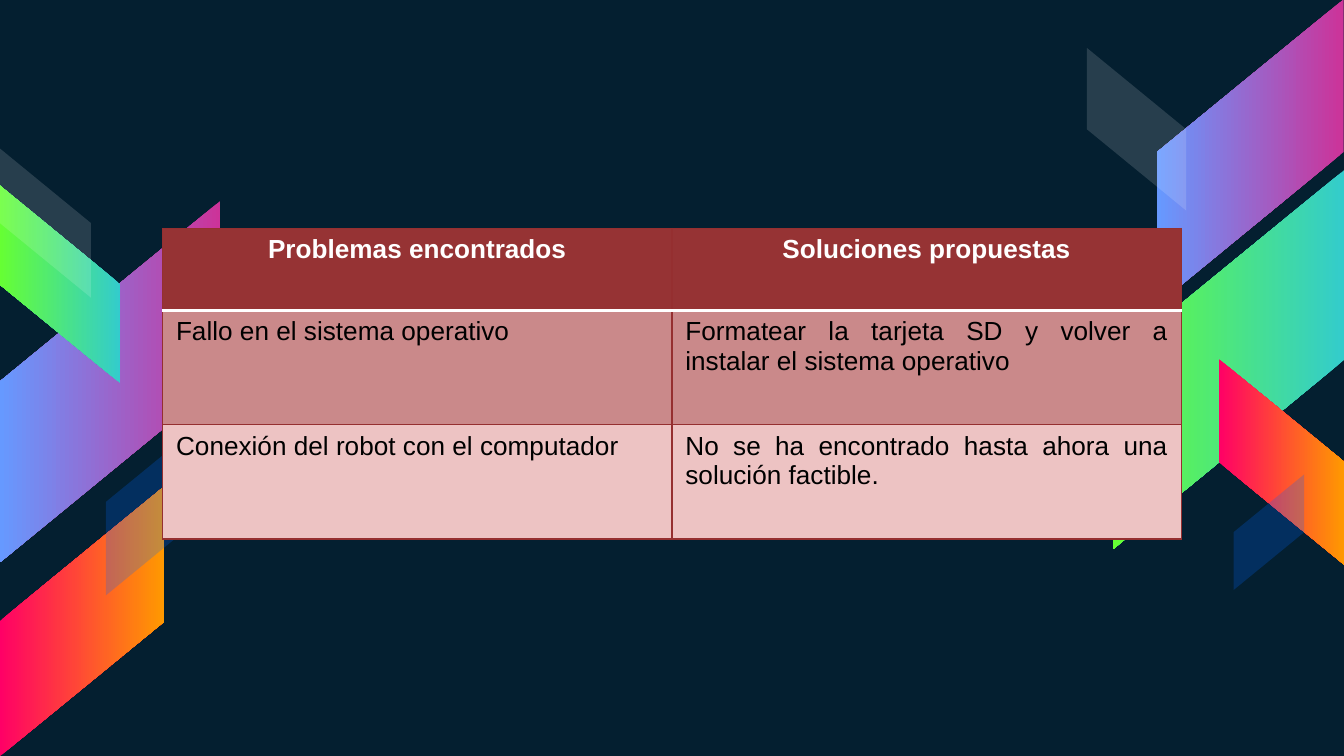
from lxml import etree
from pptx import Presentation, util as u
from pptx.dml.color import RGBColor
from pptx.enum import shapes, text
from pptx.oxml import ns

WIDTH = u.Inches(10)
HEIGHT = WIDTH * 9 // 16
FONT = "Arial"

NIGHT = RGBColor(0x04, 0x1F, 0x30)
WHITE = RGBColor(0xFF, 0xFF, 0xFF)
BLACK = RGBColor(0x00, 0x00, 0x00)
BLUE = RGBColor(0x00, 0x66, 0xFF)
HEADER_RED = RGBColor(0x96, 0x33, 0x34)
BORDER_RED = RGBColor(0x95, 0x2F, 0x30)
ROW_FILLS = (HEADER_RED, RGBColor(0xCA, 0x89, 0x8A), RGBColor(0xED, 0xC3, 0xC3))

# Ribbon paints: two gradient colours, or one colour and its opacity in percent
PINK_BLUE = (RGBColor(0xCC, 0x33, 0x99), RGBColor(0x66, 0x99, 0xFF))
TEAL_GREEN = (RGBColor(0x33, 0xCC, 0xCC), RGBColor(0x66, 0xFF, 0x33))
RED_ORANGE = (RGBColor(0xFF, 0x00, 0x66), RGBColor(0xFF, 0x99, 0x00))
WHITE_GLASS = (WHITE, 14)
BLUE_GLASS = (BLUE, 23)

# Centre x, centre y (percent of slide), length (percent of width), turn, flip, paint
RIBBONS = (
    # Right side
    (93.05, 20.09, 22.7, 90, True, PINK_BLUE),
    (91.4, 47.6, 28.2, 90, True, TEAL_GREEN),
    (95.35, 61.1, 15.3, 270, False, RED_ORANGE),
    (84.57, 17.1, 12.1, 270, False, WHITE_GLASS),
    (94.42, 70.4, 8.6, 270, True, BLUE_GLASS),
    # Left side
    (8.2, 50.48, 26.9, 90, True, PINK_BLUE),
    (4.45, 37.6, 14.7, 90, False, TEAL_GREEN),
    (6.1, 82.2, 20.1, 270, True, RED_ORANGE),
    (3.38, 29.5, 11.1, 270, False, WHITE_GLASS),
    (12.12, 66.4, 13.9, 270, True, BLUE_GLASS),
)
RIBBON_RATIO = 0.61

ROWS = (
    ("Problemas encontrados", "Soluciones propuestas"),
    ("Fallo en el sistema operativo",
     "Formatear la tarjeta SD y volver a instalar el sistema operativo"),
    ("Conexión del robot con el computador",
     "No se ha encontrado hasta ahora una solución factible."),
)
ROW_HEIGHTS = (0.61, 0.85, 0.85)
COLUMN_WIDTH = 3.79


def paint_ribbon(shape, paint):
    first, second = paint
    if isinstance(second, RGBColor):
        shape.fill.gradient()
        shape.fill.gradient_angle = 270
        for stop, color in zip(shape.fill.gradient_stops, paint):
            stop.color.rgb = color
    else:
        shape.fill.solid()
        shape.fill.fore_color.rgb = first
        color = shape._element.spPr.find(".//" + ns.qn("a:srgbClr"))
        etree.SubElement(color, ns.qn("a:alpha"), val=str(second * 1000))


def add_ribbon(slide, x, y, length, turn, flip, paint):
    width = int(WIDTH * length / 100)
    height = int(width * RIBBON_RATIO)
    left = int(WIDTH * x / 100 - width / 2)
    top = int(HEIGHT * y / 100 - height / 2)
    shape = slide.shapes.add_shape(
        shapes.MSO_SHAPE.PARALLELOGRAM, left, top, width, height)
    shape.adjustments[0] = 0.819
    shape.rotation = turn
    if flip:
        shape._element.spPr.find(ns.qn("a:xfrm")).set("flipH", "1")
    shape.shadow.inherit = False
    shape.line.fill.background()
    paint_ribbon(shape, paint)


def write(frame, content, size=14, color=BLACK, bold=False,
          align=text.PP_ALIGN.JUSTIFY):
    paragraph = frame.paragraphs[0]
    paragraph.alignment = align
    run = paragraph.add_run()
    run.text = content
    font = run.font
    font.name, font.size, font.bold = FONT, u.Pt(size), bold
    font.color.rgb = color


def set_border(cell, side, color, width):
    line = etree.SubElement(cell._tc.get_or_add_tcPr(), ns.qn("a:ln" + side),
                            w=str(u.Pt(width)))
    fill = etree.SubElement(line, ns.qn("a:solidFill"))
    etree.SubElement(fill, ns.qn("a:srgbClr"), val=str(color))


def fill_cell(cell, content, row):
    # Borders come before the fill; a white rule runs under the header
    white_side = {0: "B", 1: "T"}.get(row)
    for side in "LRTB":
        color, width = (WHITE, 2) if side == white_side else (BORDER_RED, 0.75)
        set_border(cell, side, color, width)
    cell.fill.solid()
    cell.fill.fore_color.rgb = ROW_FILLS[row]
    if row == 0:
        write(cell.text_frame, content, color=WHITE, bold=True,
              align=text.PP_ALIGN.CENTER)
    else:
        write(cell.text_frame, content)


def add_problem_table(slide):
    width = u.Inches(COLUMN_WIDTH * len(ROWS[0]))
    table = slide.shapes.add_table(
        len(ROWS), len(ROWS[0]), (WIDTH - width) // 2, u.Inches(1.7),
        width, u.Inches(sum(ROW_HEIGHTS))).table
    for column in table.columns:
        column.width = u.Inches(COLUMN_WIDTH)
    for row, contents in enumerate(ROWS):
        table.rows[row].height = u.Inches(ROW_HEIGHTS[row])
        for column, content in enumerate(contents):
            fill_cell(table.cell(row, column), content, row)


def main():
    presentation = Presentation()
    presentation.slide_width, presentation.slide_height = WIDTH, HEIGHT
    slide = presentation.slides.add_slide(presentation.slide_layouts[6])

    # Background and ribbons
    slide.background.fill.solid()
    slide.background.fill.fore_color.rgb = NIGHT
    for ribbon in RIBBONS:
        add_ribbon(slide, *ribbon)

    # Problems and solutions
    add_problem_table(slide)
    presentation.save("out.pptx")


if __name__ == "__main__":
    main()
